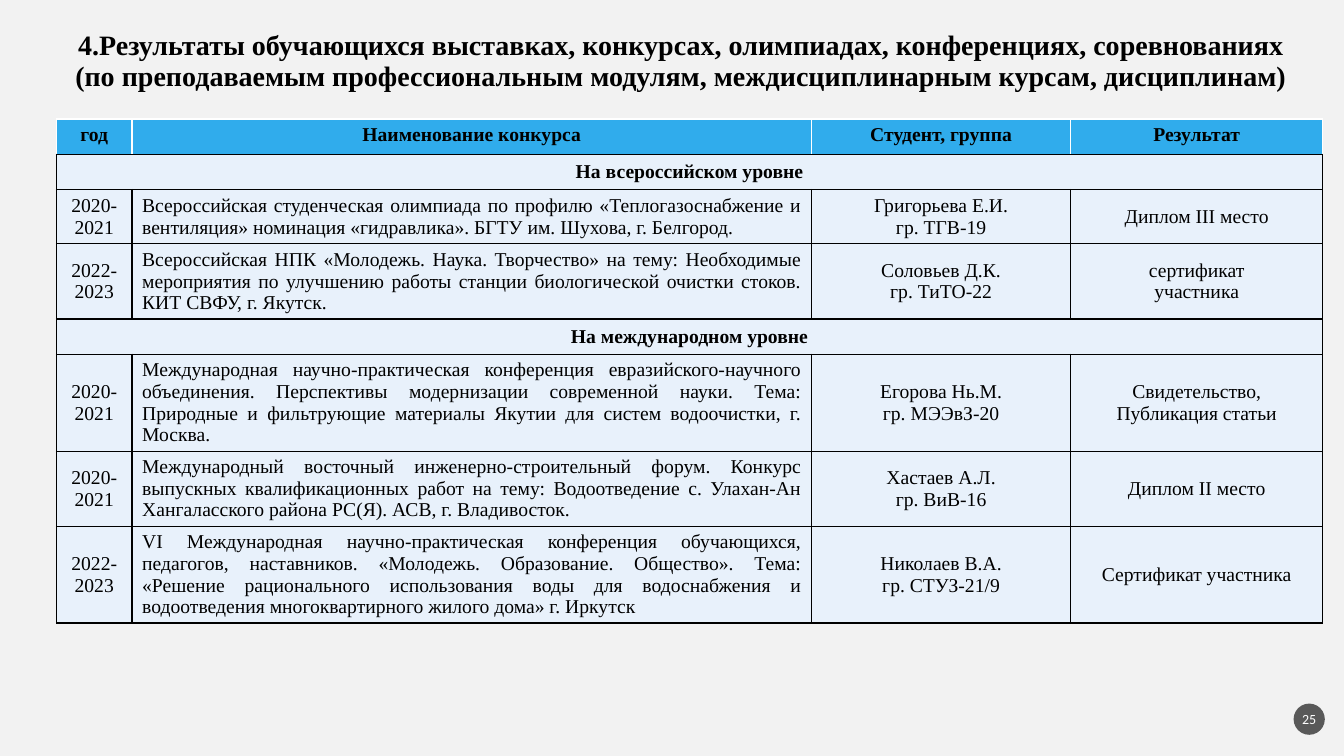
import pptx
import pptx.util
import pptx.dml.color
import pptx.enum.shapes
import pptx.enum.text
import pptx.oxml
import pptx.oxml.ns
from dataclasses import dataclass

Inches = pptx.util.Inches
PP_ALIGN = pptx.enum.text.PP_ALIGN
ANCHOR = pptx.enum.text.MSO_ANCHOR


@dataclass(frozen=True)
class Theme:
    background: str = "F2F2F2"
    text: str = "000000"
    header: str = "30ACEC"
    row: str = "E8F1FB"
    light: str = "FFFFFF"
    badge: str = "595959"
    font: str = "Times New Roman"
    badge_font: str = "Calibri"
    title_size: int = 20
    table_size: int = 14
    badge_size: int = 10


theme = Theme()
rgb = pptx.dml.color.RGBColor.from_string


def write(tf, text, size, color=theme.text, font=theme.font, bold=False, align=PP_ALIGN.CENTER):
    """Fill a text frame, one paragraph for each line of text."""
    for i, line in enumerate(text.split("\n")):
        p = tf.paragraphs[0] if i == 0 else tf.add_paragraph()
        p.alignment = align
        r = p.add_run()
        r.text = line
        r.font.size = pptx.util.Pt(size)
        r.font.name = font
        r.font.bold = bold
        r.font.color.rgb = rgb(color)


def set_borders(cell, colors):
    """Draw 1 pt cell borders; colors go left, right, top, bottom."""
    tc_pr = cell._tc.get_or_add_tcPr()
    for i, (side, color) in enumerate(zip("LRTB", colors)):
        tc_pr.insert(i, pptx.oxml.parse_xml(
            f'<a:ln{side} {pptx.oxml.ns.nsdecls("a")} w="12700"><a:solidFill>'
            f'<a:srgbClr val="{color}"/></a:solidFill></a:ln{side}>'))


prs = pptx.Presentation()
prs.slide_width, prs.slide_height = Inches(13.33), Inches(7.5)
s = prs.slides.add_slide(prs.slide_layouts[5])
s.background.fill.solid()
s.background.fill.fore_color.rgb = rgb(theme.background)

# Title
title = s.shapes.title
title.left, title.top, title.width, title.height = map(Inches, (0.56, 0.38, 12.39, 0.47))
tf = title.text_frame
tf.margin_left = tf.margin_right = tf.margin_top = tf.margin_bottom = 0
tf.word_wrap = True
tf.auto_size = pptx.enum.text.MSO_AUTO_SIZE.NONE
tf.vertical_anchor = ANCHOR.MIDDLE
write(tf, "4.Результаты обучающихся выставках, конкурсах, олимпиадах, конференциях, соревнованиях "
          "(по преподаваемым профессиональным модулям, междисциплинарным курсам, дисциплинам)",
      theme.title_size, bold=True)
tf.paragraphs[0].line_spacing = 0.9

# Results table: a row with a single text is a section heading across all columns
rows = [
    (0.35, ["год", "Наименование конкурса", "Студент, группа", "Результат"]),
    (0.35, ["На всероссийском уровне"]),
    (0.54, ["2020-2021",
            "Всероссийская студенческая олимпиада по профилю «Теплогазоснабжение и вентиляция» "
            "номинация «гидравлика». БГТУ им. Шухова, г. Белгород.",
            "Григорьева Е.И.\nгр. ТГВ-19", "Диплом III место"]),
    (0.74, ["2022-2023",
            "Всероссийская НПК «Молодежь. Наука. Творчество» на тему: Необходимые мероприятия по "
            "улучшению работы станции биологической очистки стоков. КИТ СВФУ, г. Якутск.",
            "Соловьев Д.К.\nгр. ТиТО-22", "сертификат\nучастника"]),
    (0.35, ["На международном уровне"]),
    (0.96, ["2020-2021",
            "Международная научно-практическая конференция евразийского-научного объединения. "
            "Перспективы модернизации современной науки. Тема: Природные и фильтрующие материалы "
            "Якутии для систем водоочистки, г. Москва.",
            "Егорова Нь.М.\nгр. МЭЭвЗ-20", "Свидетельство,\nПубликация статьи"]),
    (0.74, ["2020-2021",
            "Международный восточный инженерно-строительный форум. Конкурс выпускных "
            "квалификационных работ на тему: Водоотведение с. Улахан-Ан Хангаласского района "
            "РС(Я). АСВ, г. Владивосток.",
            "Хастаев А.Л.\nгр. ВиВ-16", "Диплом II место"]),
    (0.96, ["2022-2023",
            "VI Международная научно-практическая конференция обучающихся, педагогов, наставников. "
            "«Молодежь. Образование. Общество». Тема: «Решение рационального использования воды "
            "для водоснабжения и водоотведения многоквартирного жилого дома» г. Иркутск",
            "Николаев В.А.\nгр. СТУЗ-21/9", "Сертификат участника"]),
]
col_widths = [0.75, 6.74, 2.57, 2.5]
table = s.shapes.add_table(len(rows), len(col_widths), Inches(0.56), Inches(1.18),
                           Inches(sum(col_widths)), Inches(sum(h for h, _ in rows))).table
for column, width in zip(table.columns, col_widths):
    column.width = Inches(width)

for i, (height, texts) in enumerate(rows):
    table.rows[i].height = Inches(height)
    is_header, is_section = i == 0, len(texts) == 1
    if is_section:
        table.cell(i, 0).merge(table.cell(i, len(col_widths) - 1))
    for j in range(len(col_widths)):
        cell = table.cell(i, j)
        cell.fill.solid()
        cell.fill.fore_color.rgb = rgb(theme.header if is_header else theme.row)
        set_borders(cell, [theme.light if is_header else theme.text] * 3 + [theme.text])
        cell.vertical_anchor = ANCHOR.TOP if is_header else ANCHOR.MIDDLE
        if j < len(texts):
            is_contest = j == 1 and not is_header
            write(cell.text_frame, texts[j], theme.table_size, bold=is_header or is_section,
                  align=PP_ALIGN.JUSTIFY if is_contest else PP_ALIGN.CENTER)

# Slide number badge
badge = s.shapes.add_shape(pptx.enum.shapes.MSO_SHAPE.OVAL, Inches(12.83), Inches(6.98),
                           Inches(0.31), Inches(0.31))
badge.shadow.inherit = False
badge.fill.solid()
badge.fill.fore_color.rgb = rgb(theme.badge)
badge.line.fill.background()
tf = badge.text_frame
tf.margin_left = tf.margin_right = tf.margin_top = tf.margin_bottom = 0
tf.word_wrap = False
tf.vertical_anchor = ANCHOR.MIDDLE
write(tf, "25", theme.badge_size, theme.light, theme.badge_font)

prs.save("out.pptx")
